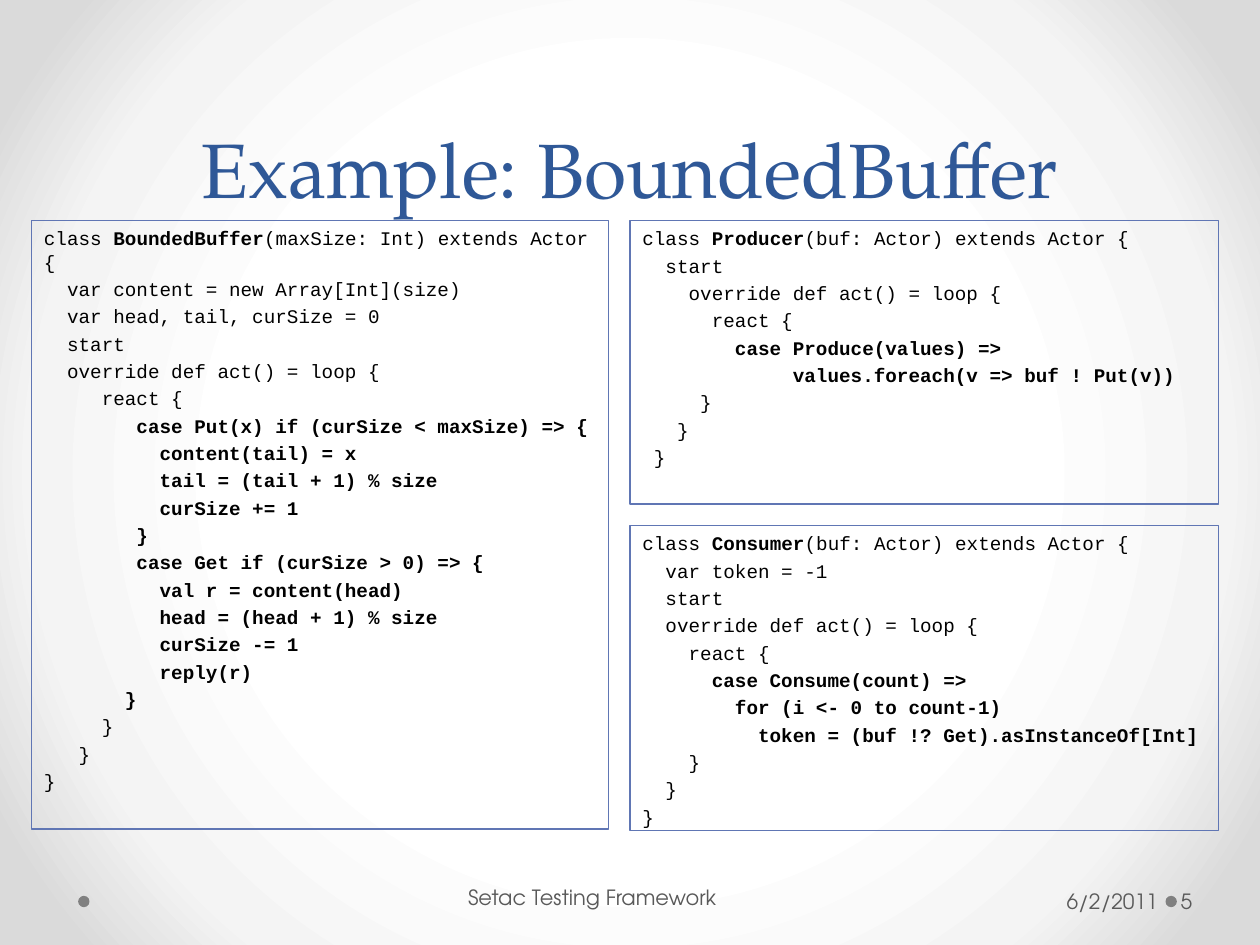
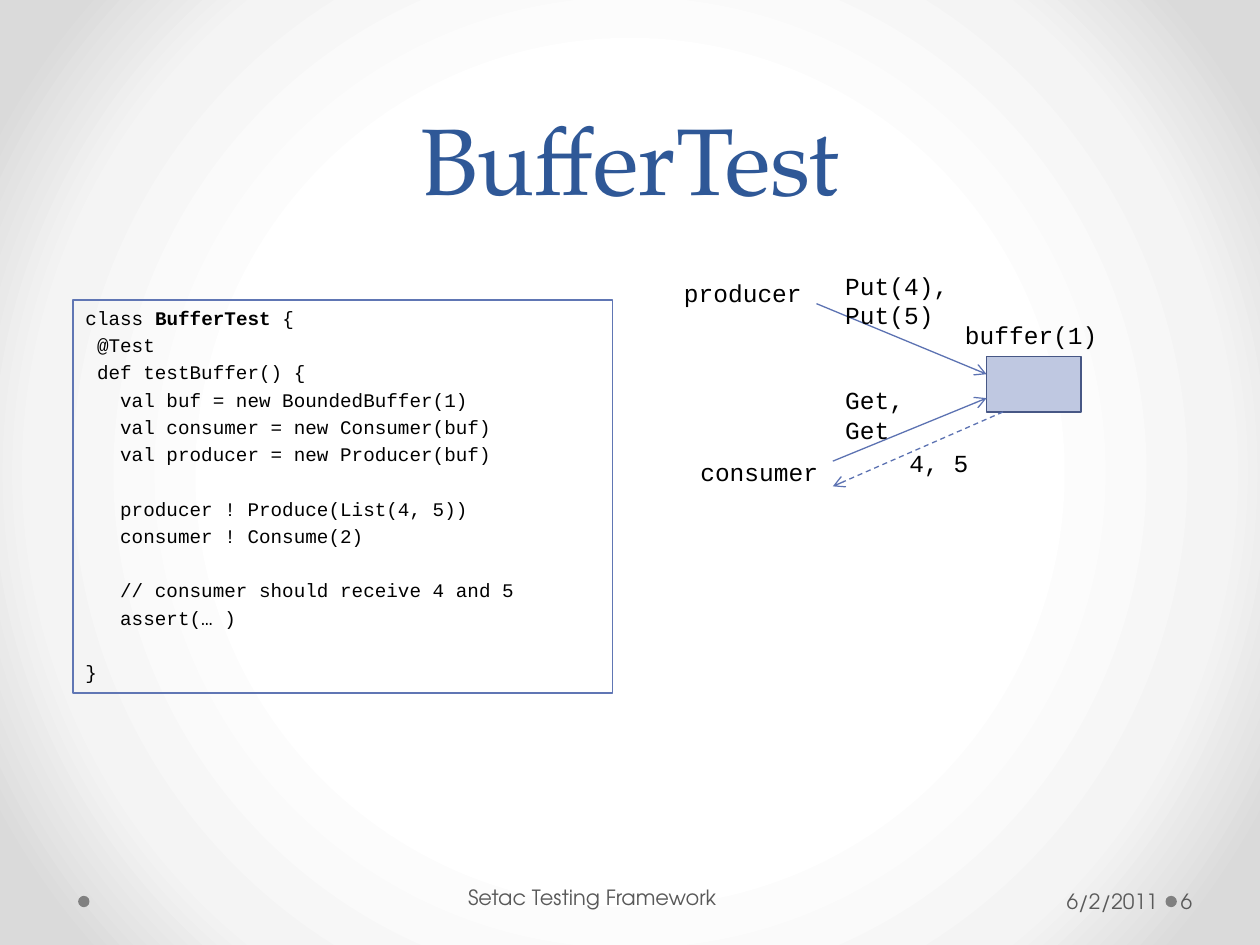
from typing import NamedTuple

from pptx import Presentation
from pptx.dml.color import RGBColor
from pptx.enum.dml import MSO_LINE
from pptx.enum.shapes import MSO_CONNECTOR, MSO_SHAPE
from pptx.enum.text import MSO_ANCHOR, PP_ALIGN
from pptx.oxml import parse_xml
from pptx.oxml.ns import nsdecls
from pptx.oxml.xmlchemy import OxmlElement
from pptx.util import Inches, Pt

LEFT, CENTER, RIGHT = PP_ALIGN.LEFT, PP_ALIGN.CENTER, PP_ALIGN.RIGHT
TOP, MIDDLE, BOTTOM = MSO_ANCHOR.TOP, MSO_ANCHOR.MIDDLE, MSO_ANCHOR.BOTTOM
RECTANGLE, OVAL = MSO_SHAPE.RECTANGLE, MSO_SHAPE.OVAL
STRAIGHT, DASH = MSO_CONNECTOR.STRAIGHT, MSO_LINE.DASH

BLACK = RGBColor(0x00, 0x00, 0x00)
TITLE_BLUE = RGBColor(0x2F, 0x58, 0x97)
FRAME_BLUE = RGBColor(0x60, 0x76, 0xB4)
ARROW_BLUE = RGBColor(0x5C, 0x72, 0xB2)
BUFFER_FILL = RGBColor(0xBF, 0xC8, 0xE1)
BUFFER_EDGE = RGBColor(0x47, 0x57, 0x85)
DOT_GRAY = RGBColor(0x80, 0x80, 0x80)
FOOTER_GRAY = RGBColor(0x59, 0x59, 0x59)
BACKDROP = ((50, "FFFFFF"), (76, "F4F4F4"), (92, "DADADA"))

CODE_FONT = "Courier New"
FOOTER_FONT = "TeX Gyre Adventor"
TITLE_FONT = "TeX Gyre Pagella"
LINE_WIDTH = Pt(0.75)
CODE_GAP = 2.4      # points between code lines
CODE_PITCH = 15.4   # points from one code line to the next


class Area(NamedTuple):
    left: float
    top: float
    width: float
    height: float

    def lengths(self) -> list:
        return [Inches(value) for value in self]


class Style(NamedTuple):
    font: str
    size: float
    color: RGBColor
    align: int = LEFT
    anchor: int = TOP
    insets: tuple = (0.1, 0.05, 0.1, 0.05)
    spacing: float | None = None


class Label(NamedTuple):
    text: str
    area: Area


class Listing(NamedTuple):
    area: Area
    code: str       # ** switches bold on and off


class Arrow(NamedTuple):
    start: tuple
    end: tuple
    dashed: bool = False


CODE_STYLE = Style(CODE_FONT, 11, BLACK)
LABEL_STYLE = Style(CODE_FONT, 14, BLACK)
DATE_STYLE = Style(FOOTER_FONT, 12, FOOTER_GRAY, RIGHT, MIDDLE, (0.1, 0.05, 0.05, 0.05))
FOOTER_STYLE = DATE_STYLE._replace(align=CENTER, insets=(0.05, 0.05, 0.1, 0.05))
NUMBER_STYLE = DATE_STYLE._replace(align=LEFT, insets=(0.03, 0.05, 0.05, 0.05))

BUFFER_CODE = """class **BoundedBuffer**(maxSize: Int) extends Actor {
  var content = new Array[Int](size)
  var head, tail, curSize = 0
  start
  override def act() = loop {
     react {
**        case Put(x) if (curSize < maxSize) => {
          content(tail) = x
          tail = (tail + 1) % size
          curSize += 1
        }
        case Get if (curSize > 0) => {
          val r = content(head)
          head = (head + 1) % size
          curSize -= 1
          reply(r)
       }**
     }
   }
}"""

CONSUMER_CODE = """class **Consumer**(buf: Actor) extends Actor {
  var token = -1
  start
  override def act() = loop {
    react {
**      case Consume(count) =>
        for (i <- 0 to count-1)
          token = (buf !? Get).asInstanceOf[Int]**
    }
  }
}"""

PRODUCER_CODE = """class **Producer**(buf: Actor) extends Actor {
  start
    override def act() = loop {
      react {
**        case Produce(values) =>
             values.foreach(v => buf ! Put(v))**
     }
   }
 }"""

TEST_CODE = """class **BufferTest** {
 @Test
 def testBuffer() {
   val buf = new BoundedBuffer(1)
   val consumer = new Consumer(buf)
   val producer = new Producer(buf)

   producer ! Produce(List(4, 5))
   consumer ! Consume(2)

   // consumer should receive 4 and 5
   assert(… )

}"""

CLASS_LISTINGS = (
    Listing(Area(0.25, 1.75, 4.58, 4.83), BUFFER_CODE),
    Listing(Area(5, 4.17, 4.67, 2.42), CONSUMER_CODE),
    Listing(Area(5, 1.75, 4.67, 2.25), PRODUCER_CODE),
)
TEST_LISTING = Listing(Area(0.58, 2.38, 4.28, 3.12), TEST_CODE)
BUFFER_AREA = Area(7.83, 2.83, 0.75, 0.44)
MESSAGES = (
    Arrow((6.48, 2.41), (7.83, 2.97)),
    Arrow((6.61, 3.66), (7.83, 3.16)),
    Arrow((7.96, 3.27), (6.61, 3.86), dashed=True),
)
DIAGRAM_LABELS = (
    Label("buffer(1)", Area(7.56, 2.49, 1.28, 0.34)),
    Label("Put(4), Put(5)", Area(6.61, 2.1, 1.22, 0.57)),
    Label("Get, Get", Area(6.61, 3.01, 1.08, 0.57)),
    Label("producer", Area(5.33, 2.16, 1.28, 0.34)),
    Label("consumer", Area(5.46, 3.58, 1.28, 0.34)),
    Label("4, 5", Area(7.12, 3.51, 0.84, 0.34)),
)


def apply(target, values: dict) -> None:
    for name, value in values.items():
        setattr(target, name, value)


def set_frame(frame, style: Style) -> None:
    left, top, right, bottom = (Inches(inset) for inset in style.insets)
    apply(frame, {"word_wrap": True, "vertical_anchor": style.anchor,
                  "margin_left": left, "margin_top": top,
                  "margin_right": right, "margin_bottom": bottom})


def add_span(para, text: str, style: Style, bold: bool = False) -> None:
    span = para.add_run()
    span.text = text
    apply(span.font, {"name": style.font, "size": Pt(style.size), "bold": bold})
    span.font.color.rgb = style.color


def add_text(page, label: Label, style: Style) -> None:
    box = page.shapes.add_textbox(*label.area.lengths())
    set_frame(box.text_frame, style)
    para = box.text_frame.paragraphs[0]
    para.alignment = style.align
    if style.spacing:
        para.line_spacing = Pt(style.spacing)
    add_span(para, label.text, style)


def add_box(page, kind: int, area: Area, fill: RGBColor | None = None,
            edge: RGBColor | None = None):
    box = page.shapes.add_shape(kind, *area.lengths())
    box.shadow.inherit = False
    if fill is None:
        box.fill.background()
    else:
        box.fill.solid()
        box.fill.fore_color.rgb = fill
    if edge is None:
        box.line.fill.background()
    else:
        box.line.color.rgb = edge
        box.line.width = LINE_WIDTH
    return box


def add_listing(page, listing: Listing) -> None:
    frame = add_box(page, RECTANGLE, listing.area, edge=FRAME_BLUE).text_frame
    set_frame(frame, CODE_STYLE)
    bold = False
    gap = 0.0
    for index, line in enumerate(listing.code.split("\n")):
        if not line:
            gap += CODE_PITCH   # an empty code line widens the next gap
            continue
        para = frame.add_paragraph() if index else frame.paragraphs[0]
        apply(para, {"alignment": LEFT, "space_before": Pt(gap)})
        gap = CODE_GAP
        for position, part in enumerate(line.split("**")):
            if position:
                bold = not bold
            if part:
                add_span(para, part, CODE_STYLE, bold)


def add_arrow(page, arrow: Arrow) -> None:
    ends = [Inches(value) for value in arrow.start + arrow.end]
    connector = page.shapes.add_connector(STRAIGHT, *ends)
    connector.line.color.rgb = ARROW_BLUE
    connector.line.width = LINE_WIDTH
    if arrow.dashed:
        connector.line.dash_style = DASH
    head = OxmlElement("a:tailEnd")
    head.set("type", "arrow")
    connector.line._get_or_add_ln().append(head)
    connector._element.spPr.append(OxmlElement("a:effectLst"))


def set_background(page) -> None:
    stops = "".join(f'<a:gs pos="{place * 1000}"><a:srgbClr val="{color}"/></a:gs>'
                    for place, color in BACKDROP)
    page._element.cSld.insert(0, parse_xml(
        f'<p:bg {nsdecls("p", "a")}><p:bgPr><a:gradFill rotWithShape="1">'
        f'<a:gsLst>{stops}</a:gsLst><a:path path="circle">'
        '<a:fillToRect l="50000" t="50000" r="50000" b="50000"/></a:path>'
        '</a:gradFill><a:effectLst/></p:bgPr></p:bg>'))


def add_page(deck, title: str, title_size: float, number: int):
    """Start a slide with the shared background, title and footer."""
    page = deck.slides.add_slide(deck.slide_layouts[6])
    set_background(page)
    for left in (9.25, 0.62):
        add_box(page, OVAL, Area(left, 7.11, 0.09, 0.09), fill=DOT_GRAY)
    title_style = Style(TITLE_FONT, title_size, TITLE_BLUE, CENTER, BOTTOM, spacing=58)
    add_text(page, Label(title, Area(0.5, 0, 9, 1.75)), title_style)
    add_text(page, Label("6/2/2011", Area(6.96, 6.95, 2.28, 0.4)), DATE_STYLE)
    add_text(page, Label("Setac Testing Framework", Area(3.17, 6.92, 3.11, 0.4)),
             FOOTER_STYLE)
    add_text(page, Label(str(number), Area(9.34, 6.95, 0.61, 0.4)), NUMBER_STYLE)
    return page


def main() -> None:
    deck = Presentation()
    deck.slide_width, deck.slide_height = Inches(10), Inches(7.5)

    # Actor classes
    page = add_page(deck, "Example: BoundedBuffer", 44, 5)
    for listing in CLASS_LISTINGS:
        add_listing(page, listing)

    # Test code and message diagram
    page = add_page(deck, "BufferTest", 54, 6)
    add_box(page, RECTANGLE, BUFFER_AREA, BUFFER_FILL, BUFFER_EDGE)
    for message in MESSAGES:
        add_arrow(page, message)
    for label in DIAGRAM_LABELS:
        add_text(page, label, LABEL_STYLE)
    add_listing(page, TEST_LISTING)

    deck.save("out.pptx")


if __name__ == "__main__":
    main()
